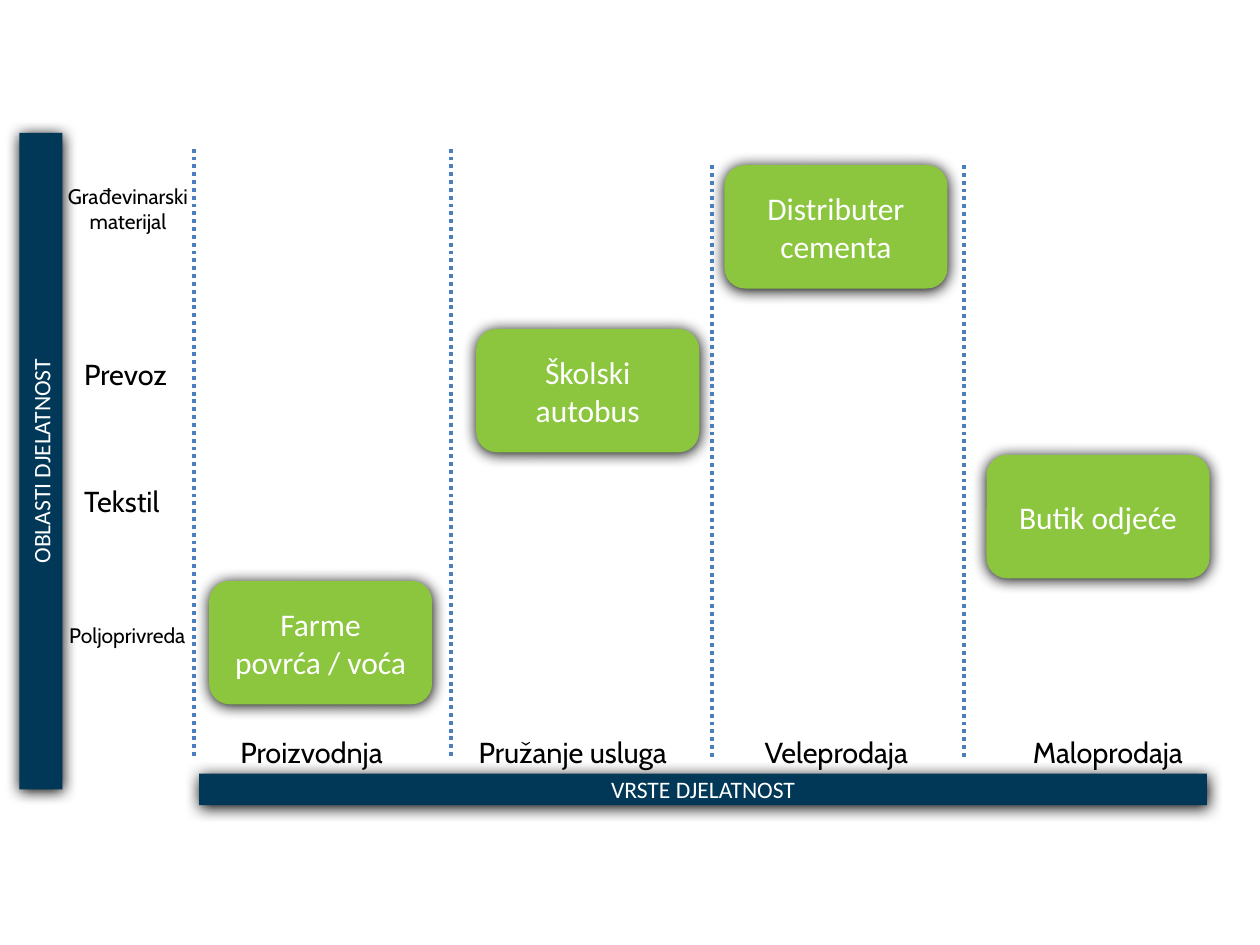
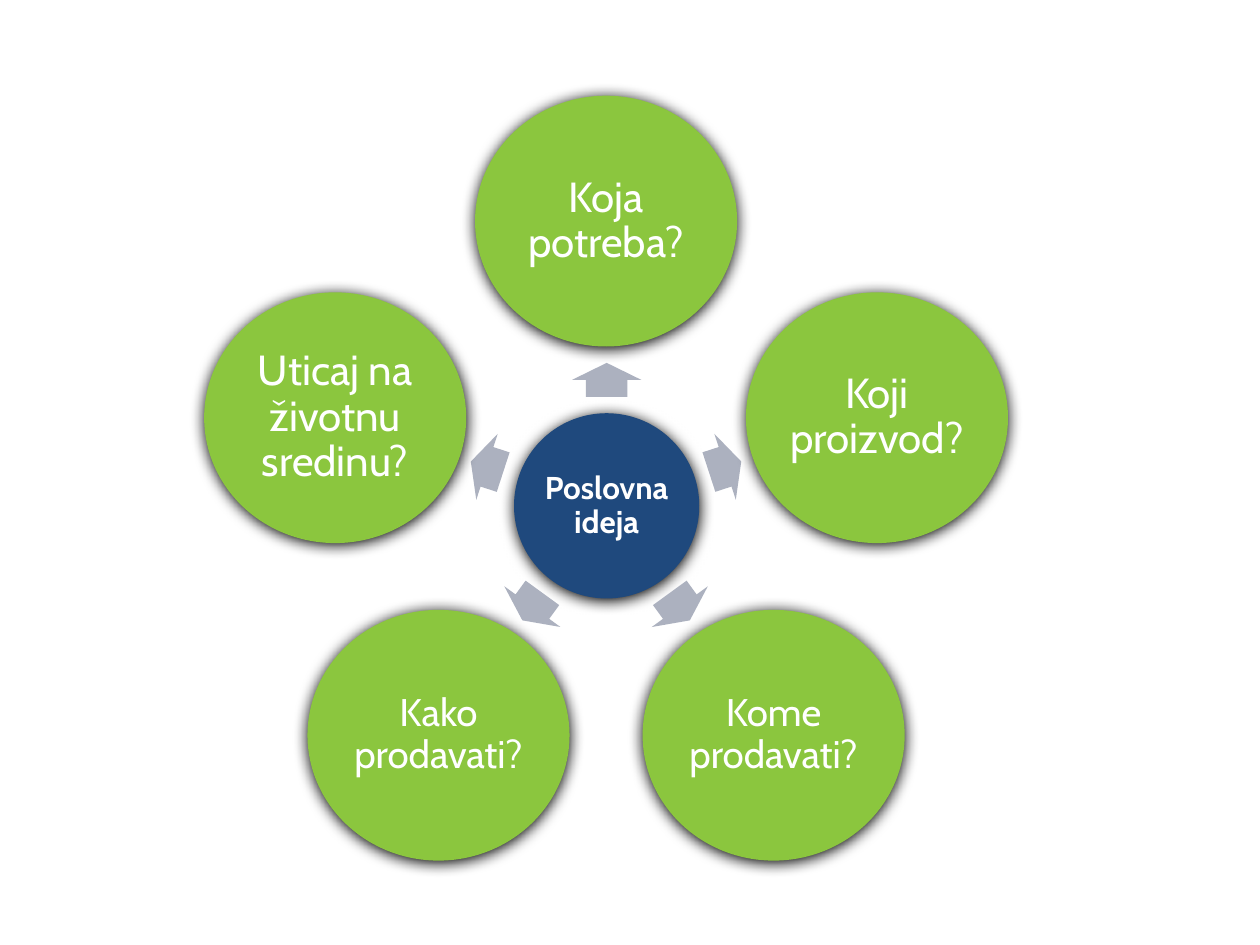
import math
from dataclasses import dataclass

from lxml import etree
from pptx import Presentation
from pptx.dml.color import RGBColor
from pptx.enum.dml import MSO_LINE
from pptx.enum.shapes import MSO_CONNECTOR, MSO_SHAPE
from pptx.enum.text import MSO_ANCHOR, MSO_AUTO_SIZE, PP_ALIGN
from pptx.oxml.ns import qn
from pptx.util import Pt

EMU_PER_PX = 9144  # 100 px to the inch
BLANK_LAYOUT = 6
RECT, ROUNDED = MSO_SHAPE.RECTANGLE, MSO_SHAPE.ROUNDED_RECTANGLE
OVAL, ARROW = MSO_SHAPE.OVAL, MSO_SHAPE.RIGHT_ARROW
STRAIGHT, DOTTED = MSO_CONNECTOR.STRAIGHT, MSO_LINE.ROUND_DOT
CENTER, LEFT, MIDDLE = PP_ALIGN.CENTER, PP_ALIGN.LEFT, MSO_ANCHOR.MIDDLE
GROW = MSO_AUTO_SIZE.SHAPE_TO_FIT_TEXT


@dataclass(frozen=True)
class Theme:
    green: str = "8BC63E"
    navy: str = "013857"
    blue: str = "1F497D"
    gray: str = "ACB1BF"
    divider: str = "4B7EBC"
    white: str = "FFFFFF"
    black: str = "000000"
    sans: str = "Calibri"
    display: str = "Cabin"
    small: float = 12
    bar: float = 13.5
    label: float = 16.5
    card: float = 18
    question_small: float = 22
    question: float = 24


THEME = Theme()


@dataclass(frozen=True)
class Box:
    left: int
    top: int
    width: int
    height: int

    def inner(self, left, top, width, height):
        return Box(self.left + left, self.top + top, width, height)

    def emu(self):
        return [px(v) for v in (self.left, self.top, self.width, self.height)]


def px(value):
    return round(value * EMU_PER_PX)


def centered(x, y, width, height):
    return Box(round(x - width / 2), round(y - height / 2), width, height)


def apply(target, values):
    for name, value in values.items():
        setattr(target, name, value)


def write(frame, text, font, size, color, bold=False, align=CENTER, spacing=None):
    """Fill a text frame; each line of text becomes a paragraph."""
    frame.text = text
    for index, paragraph in enumerate(frame.paragraphs):
        # only the first line follows align; further lines are centred
        apply(paragraph, {"alignment": CENTER if index else align,
                          "line_spacing": spacing})
        apply(paragraph.font, {"name": font, "size": Pt(size), "bold": bold})
        paragraph.font.color.rgb = RGBColor.from_string(color)


def add_figure(slide, preset, box, color, shadow=True, rotation=0):
    figure = slide.shapes.add_shape(preset, *box.emu())
    figure.rotation = rotation
    figure.fill.solid()
    figure.fill.fore_color.rgb = RGBColor.from_string(color)
    figure.line.fill.background()
    figure.shadow.inherit = False
    apply(figure.text_frame, {"word_wrap": True, "vertical_anchor": MIDDLE})
    if shadow:
        effects = figure._element.spPr.find(qn("a:effectLst"))
        outer = etree.SubElement(effects, qn("a:outerShdw"), blurRad="107950",
                                 dist="12700", dir="5400000", algn="ctr", rotWithShape="0")
        etree.SubElement(outer, qn("a:srgbClr"), val=THEME.black)
    return figure


def add_axis_bar(slide, box, text, rotation=0):
    bar = add_figure(slide, RECT, box, THEME.navy, rotation=rotation)
    write(bar.text_frame, text, THEME.sans, THEME.bar, THEME.white)


def add_label(slide, box, text, size=THEME.label):
    frame = slide.shapes.add_textbox(*box.emu()).text_frame
    apply(frame, {"word_wrap": False, "auto_size": GROW})
    write(frame, text, THEME.display, size, THEME.black, align=LEFT)


def add_divider(slide, box):
    x, top, _, height = box.emu()
    divider = slide.shapes.add_connector(STRAIGHT, x, top, x, top + height)
    divider.line.color.rgb = RGBColor.from_string(THEME.divider)
    apply(divider.line, {"width": Pt(2.25), "dash_style": DOTTED})
    etree.SubElement(divider._element.spPr, qn("a:effectLst"))


def add_columns(slide, box):
    """Place each type of activity: divider, example card and label."""
    divider_bottom, label_top = 495, 472
    columns = [
        # divider x, top; card x, top; example; label x, width; type
        (139, 12, 151, 355, "Farme povrća / voća", 166, 134, "Proizvodnja"),
        (343, 12, 363, 155, "Školski autobus", 355, 172, "Pružanje usluga"),
        (550, 25, 560, 25, "Distributer cementa", 582, 135, "Veleprodaja"),
        (750, 25, 768, 255, "Butik odjeće", 795, 143, "Maloprodaja"),
    ]
    for line_x, line_top, card_x, card_top, example, label_x, width, kind in columns:
        card = add_figure(slide, ROUNDED, box.inner(card_x, card_top, 177, 98), THEME.green)
        write(card.text_frame, example, THEME.sans, THEME.card, THEME.white)
        add_label(slide, box.inner(label_x, label_top, width, 38), kind)
        add_divider(slide, box.inner(line_x, line_top, 0, divider_bottom - line_top))


def add_sectors(slide, box):
    sectors = [
        (29, 35, 118, 50, "Građevinarski\nmaterijal", THEME.small),
        (42, 172, 87, 38, "Prevoz", THEME.label),
        (42, 273, 83, 38, "Tekstil", THEME.label),
        (30, 383, 115, 30, "Poljoprivreda", THEME.small),
    ]
    for left, top, width, height, sector, size in sectors:
        add_label(slide, box.inner(left, top, width, height), sector, size)


def build_activity_matrix(slide, box):
    add_columns(slide, box)
    add_sectors(slide, box)
    add_axis_bar(slide, box.inner(143, 508, 800, 25), "VRSTE DJELATNOST")
    add_axis_bar(slide, centered(box.left + 17, box.top + 260, 521, 34),
                 "OBLASTI DJELATNOST", rotation=270)


def add_circle(slide, box, color, text, size, bold=False):
    circle = add_figure(slide, OVAL, box, color)
    sides = ("margin_left", "margin_top", "margin_right", "margin_bottom")
    apply(circle.text_frame, dict.fromkeys(sides, 0))
    write(circle.text_frame, text, THEME.display, size, THEME.white, bold, spacing=0.9)


def build_idea_wheel(slide, box):
    """Put the questions evenly around the business idea, clockwise from the top."""
    center_x, center_y = box.left + box.width / 2, box.top + 325
    questions = [
        ("Koja potreba?", THEME.question),
        ("Koji proizvod?", THEME.question),
        ("Kome prodavati?", THEME.question_small),
        ("Kako prodavati?", THEME.question_small),
        ("Uticaj na životnu sredinu?", THEME.question),
    ]
    question_radius, arrow_radius = 226, 99
    add_circle(slide, centered(center_x, center_y, 147, 147), THEME.blue,
               "Poslovna ideja", THEME.card, bold=True)
    for index, (question, size) in enumerate(questions):
        degrees = index * 360 / len(questions) - 90
        dx, dy = math.cos(math.radians(degrees)), math.sin(math.radians(degrees))
        arrow_box = centered(center_x + arrow_radius * dx, center_y + arrow_radius * dy, 27, 55)
        arrow = add_figure(slide, ARROW, arrow_box, THEME.gray, False, degrees % 360)
        arrow.adjustments[0], arrow.adjustments[1] = 0.6, 0.5
        circle_box = centered(center_x + question_radius * dx,
                              center_y + question_radius * dy, 208, 199)
        add_circle(slide, circle_box, THEME.green, question, size)


def main():
    deck = Presentation()
    apply(deck, {"slide_width": px(1000), "slide_height": px(750)})
    pages = [
        (build_activity_matrix, Box(15, 106, 945, 533)),
        (build_idea_wheel, Box(162, 76, 638, 608)),
    ]
    for build, box in pages:
        build(deck.slides.add_slide(deck.slide_layouts[BLANK_LAYOUT]), box)
    deck.save("out.pptx")


if __name__ == "__main__":
    main()
